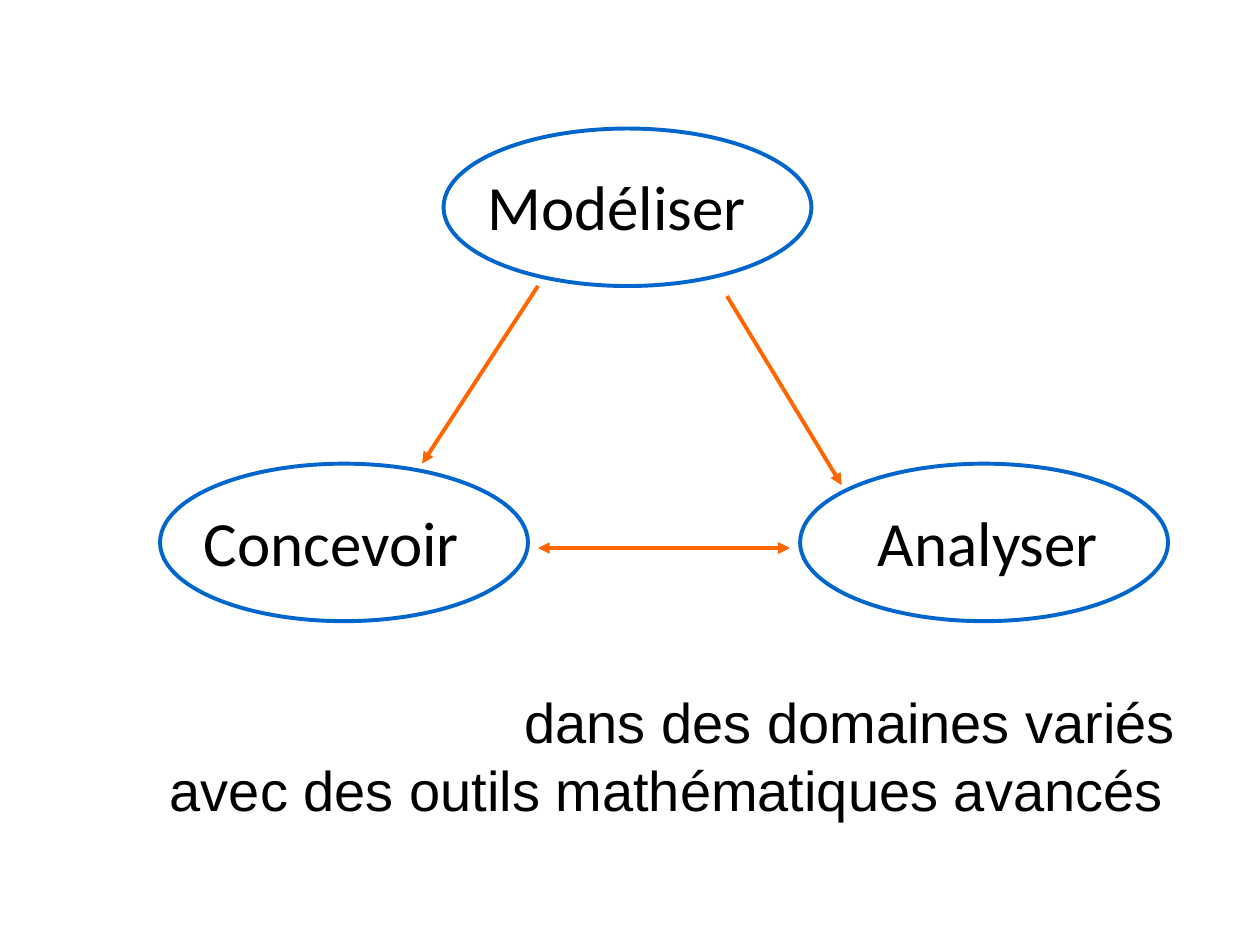
from lxml import etree
from pptx import Presentation
from pptx.dml.color import RGBColor
from pptx.enum.shapes import MSO_CONNECTOR, MSO_SHAPE
from pptx.enum.text import MSO_AUTO_SIZE, PP_ALIGN
from pptx.oxml.ns import qn
from pptx.util import Inches, Pt

STRAIGHT = MSO_CONNECTOR.STRAIGHT
ELLIPSE = MSO_SHAPE.OVAL
GROW = MSO_AUTO_SIZE.SHAPE_TO_FIT_TEXT
LEFT, RIGHT = PP_ALIGN.LEFT, PP_ALIGN.RIGHT

BLUE, ORANGE, BLACK = "0066CC", "FF6600", "000000"
LINE_WIDTH = 2.25
ELLIPSE_W, ELLIPSE_H = 2.92, 1.25
LABEL_H = 0.89
TOP_ROW, BOTTOM_ROW = 1.02, 3.68

# label, row top, ellipse left, label left, label width
ACTIVITIES = [
    ("Modéliser", TOP_ROW, 3.52, 3.77, 2.27),
    ("Analyser", BOTTOM_ROW, 6.35, 6.87, 1.96),
    ("Concevoir", BOTTOM_ROW, 1.27, 1.52, 2.24),
]
# start, end, ends that carry an arrowhead
ARROWS = [
    ((4.27, 2.27), (3.35, 3.68), ["tailEnd"]),
    ((5.77, 2.35), (6.68, 3.85), ["tailEnd"]),
    ((4.27, 4.35), (6.27, 4.35), ["headEnd", "tailEnd"]),
]
# text, box, alignment, line spacing
CAPTIONS = [
    ("dans des domaines variés", (3, 5.17, 6.43, 0.78), RIGHT, 1.44),
    ("avec des outils mathématiques avancés", (1.25, 5.95, 8.4, 0.64), LEFT, 1.0),
]


def rgb(value):
    return RGBColor.from_string(value)


def inches(*values):
    return [Inches(v) for v in values]


def add_text(s, text, box, font, size, align=LEFT, spacing=1.44, wrap=True):
    tf = s.shapes.add_textbox(*inches(*box)).text_frame
    tf.word_wrap = wrap
    tf.auto_size = GROW
    p = tf.paragraphs[0]
    p.alignment = align
    p.line_spacing = spacing
    r = p.add_run()
    r.text = text
    r.font.name = font
    r.font.size = Pt(size)
    r.font.color.rgb = rgb(BLACK)


def style_line(line, color):
    line.color.rgb = rgb(color)
    line.width = Pt(LINE_WIDTH)


def add_ellipse(s, left, top):
    sp = s.shapes.add_shape(ELLIPSE, *inches(left, top, ELLIPSE_W, ELLIPSE_H))
    sp.shadow.inherit = False
    sp.fill.background()
    style_line(sp.line, BLUE)


def add_arrow(s, start, end, heads):
    cxn = s.shapes.add_connector(STRAIGHT, *inches(*start, *end))
    style_line(cxn.line, ORANGE)
    sp_pr = cxn.element.spPr
    ln = sp_pr.find(qn("a:ln"))
    for head in heads:
        etree.SubElement(ln, qn(f"a:{head}"), type="triangle")
    etree.SubElement(sp_pr, qn("a:effectLst"))


def main():
    prs = Presentation()
    prs.slide_width, prs.slide_height = inches(10, 7.5)
    s = prs.slides.add_slide(prs.slide_layouts[6])
    for label, top, ellipse_left, left, width in ACTIVITIES:
        add_ellipse(s, ellipse_left, top)
        add_text(s, label, (left, top, width, LABEL_H), "Calibri", 36, wrap=False)
    for start, end, heads in ARROWS:
        add_arrow(s, start, end, heads)
    for text, box, align, spacing in CAPTIONS:
        add_text(s, text, box, "Arial", 32, align, spacing)
    prs.save("out.pptx")


if __name__ == "__main__":
    main()
